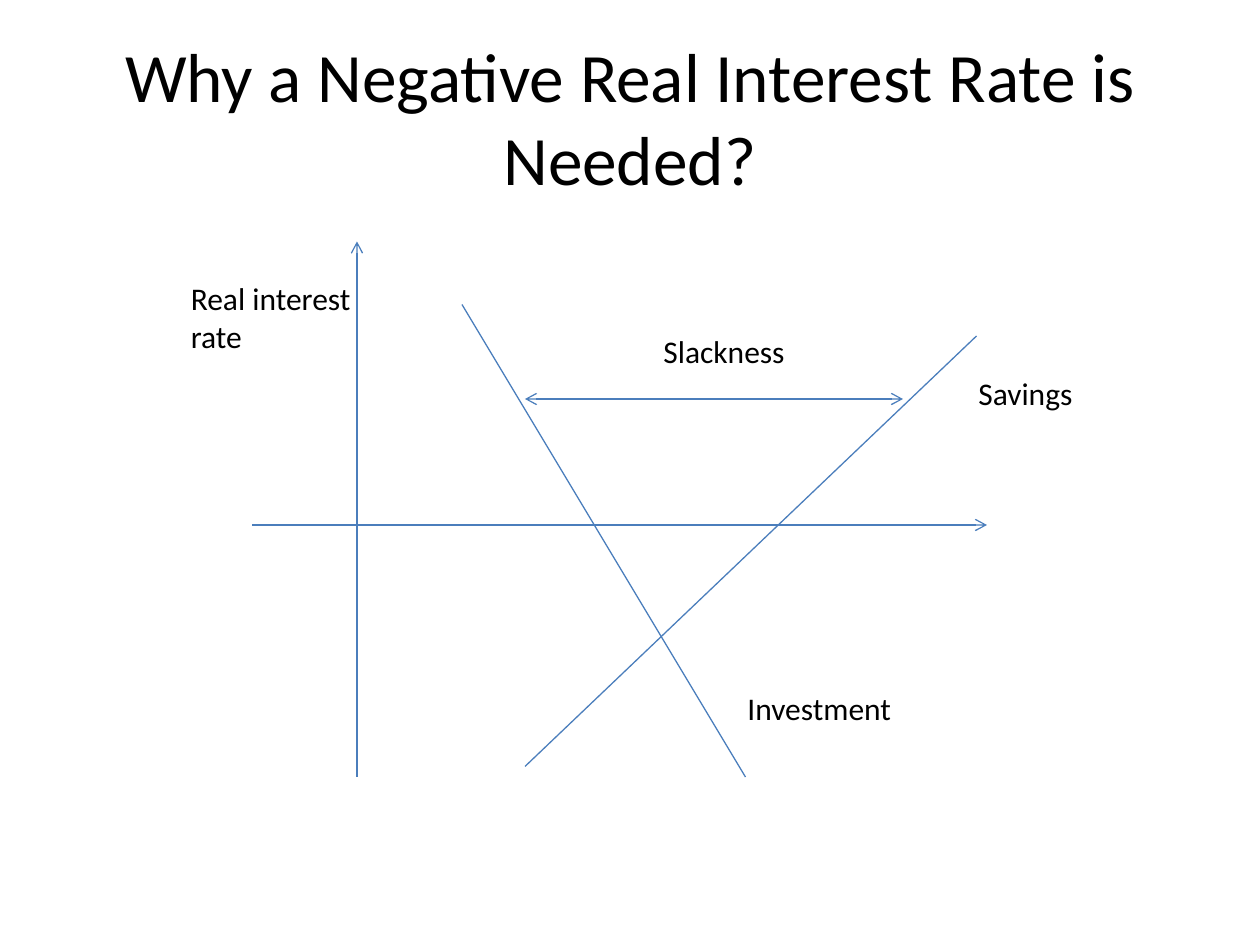
from dataclasses import dataclass

from lxml.etree import SubElement
from pptx import Presentation
from pptx.dml.color import RGBColor
from pptx.enum.shapes import MSO_CONNECTOR as Connector
from pptx.enum.text import MSO_ANCHOR as Anchor, MSO_AUTO_SIZE as AutoSize, PP_ALIGN as Align
from pptx.oxml.ns import qn
from pptx.util import Inches, Pt

CELLS_PER_INCH = 12  # the slide is a grid of 120 columns by 90 rows


@dataclass(frozen=True)
class Theme:
    font: str = "Calibri"
    ink: RGBColor = RGBColor(0x00, 0x00, 0x00)
    stroke: RGBColor = RGBColor(0x4B, 0x7E, 0xBC)
    stroke_width: float = 0.75
    title_size: float = 39.6
    label_size: float = 18


@dataclass(frozen=True)
class Line:
    """A line between two (column, row) points; ends names the arrowheads."""
    start: tuple[int, int]
    finish: tuple[int, int]
    ends: tuple[str, ...] = ()


@dataclass(frozen=True)
class Label:
    column: float
    row: float
    columns: float
    rows: float
    paragraphs: tuple[str, ...]


THEME = Theme()

TITLE = Label(6, 3.6, 108, 15, ("Why a Negative Real Interest Rate is Needed?",))

QUANTITY_AXIS = Line((24, 50), (94, 50), ("tailEnd",))
RATE_AXIS = Line((34, 74), (34, 23), ("tailEnd",))
SAVINGS = Line((50, 73), (93, 32))
INVESTMENT = Line((44, 29), (71, 74))
SLACKNESS = Line((50, 38), (86, 38), ("headEnd", "tailEnd"))

LABELS = (
    Label(62, 31, 14, 4.8, ("Slackness",)),
    Label(17, 26, 17.8, 8.5, ("Real interest", "rate")),
    Label(92, 35, 11.5, 4.8, ("Savings",)),
    Label(70, 65, 16.2, 4.8, ("Investment",)),
)


def cells(count: float) -> int:
    return Inches(count / CELLS_PER_INCH)


def draw_line(slide, line: Line) -> None:
    ends = map(cells, line.start + line.finish)
    connector = slide.shapes.add_connector(Connector.STRAIGHT, *ends)
    connector.line.color.rgb = THEME.stroke
    connector.line.width = Pt(THEME.stroke_width)
    outline = connector.line._get_or_add_ln()
    for end in line.ends:
        SubElement(outline, qn(f"a:{end}"), type="arrow")
    SubElement(connector._element.spPr, qn("a:effectLst"))


def write_text(slide, label: Label, size: float, align: Align = Align.LEFT):
    box = slide.shapes.add_textbox(*map(cells, (label.column, label.row, label.columns, label.rows)))
    frame = box.text_frame
    for index, wording in enumerate(label.paragraphs):
        paragraph = frame.add_paragraph() if index else frame.paragraphs[0]
        paragraph.alignment = align
        run = paragraph.add_run()
        run.text = wording
        run.font.name = THEME.font
        run.font.size = Pt(size)
        run.font.color.rgb = THEME.ink
    return frame


def draw_title(slide) -> None:
    frame = write_text(slide, TITLE, THEME.title_size, Align.CENTER)
    frame.word_wrap = True
    frame.vertical_anchor = Anchor.MIDDLE


def draw_label(slide, label: Label) -> None:
    frame = write_text(slide, label, THEME.label_size)
    frame.word_wrap = False
    frame.auto_size = AutoSize.SHAPE_TO_FIT_TEXT


def main() -> None:
    deck = Presentation()
    deck.slide_width, deck.slide_height = cells(120), cells(90)
    slide = deck.slides.add_slide(deck.slide_layouts[6])
    draw_title(slide)
    for line in (QUANTITY_AXIS, RATE_AXIS, SAVINGS, INVESTMENT, SLACKNESS):
        draw_line(slide, line)
    for label in LABELS:
        draw_label(slide, label)
    deck.save("out.pptx")


if __name__ == "__main__":
    main()
